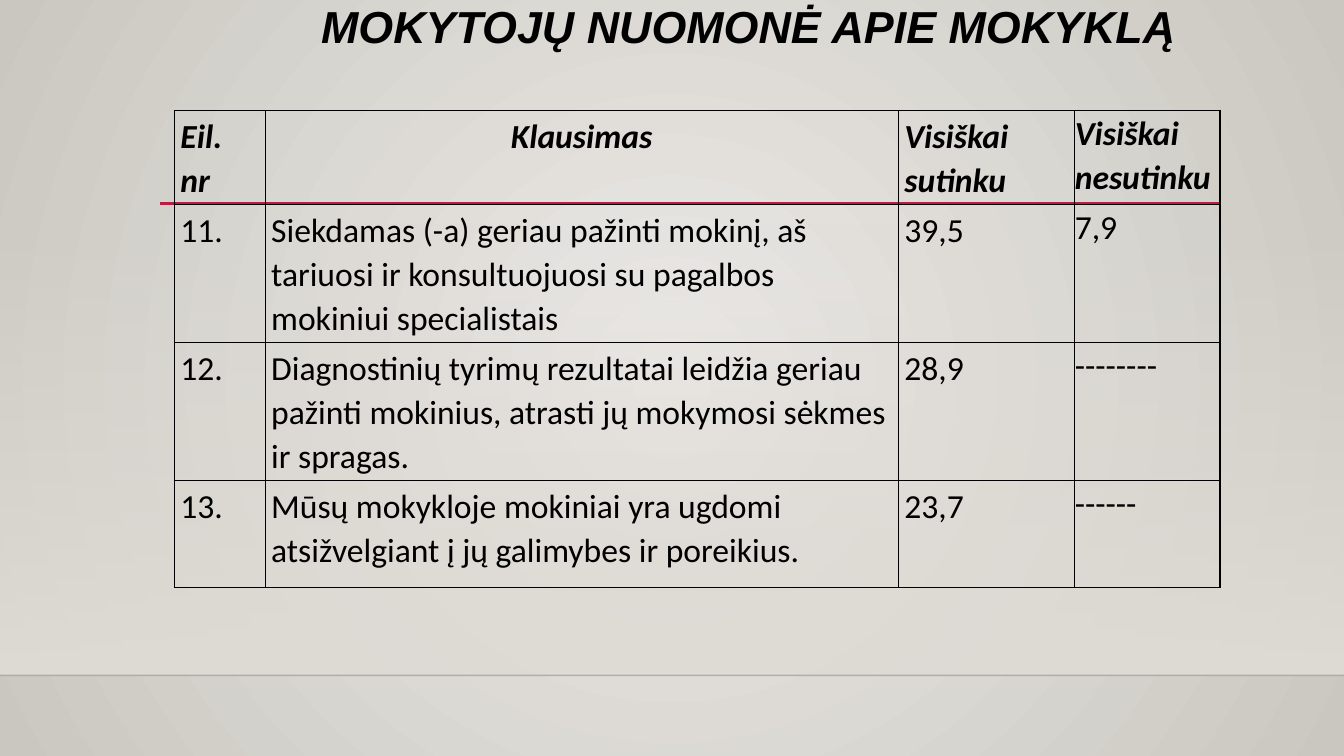
"""Build the slide with the teachers' opinion survey table."""
from lxml import etree
from pptx import Presentation, util as u
from pptx.dml.color import RGBColor
from pptx.enum import shapes, text
from pptx.oxml import parse_xml
from pptx.oxml.ns import nsdecls, qn

WIDTH, HEIGHT = 13.33, 7.5
TITLE = "MOKYTOJŲ NUOMONĖ APIE MOKYKLĄ"
ROWS = [
    ("Eil.\nnr", "Klausimas", "Visiškai sutinku", "Visiškai nesutinku"),
    ("11.", "Siekdamas (-a) geriau pažinti mokinį, aš tariuosi ir konsultuojuosi "
     "su pagalbos mokiniui specialistais", "39,5", "7,9"),
    ("12.", "Diagnostinių tyrimų rezultatai leidžia geriau pažinti mokinius, "
     "atrasti jų mokymosi sėkmes ir spragas.", "28,9", "--------"),
    ("13.", "Mūsų mokykloje mokiniai yra ugdomi atsižvelgiant į jų galimybes "
     "ir poreikius.", "23,7", "------"),
]
COLUMN_WIDTHS = [0.9, 6.28, 1.75, 1.44]
ROW_HEIGHTS = [0.93, 1.37, 1.37, 1.06]
TABLE_LEFT, TABLE_TOP = 1.73, 1.1
FLOOR_TOP, FLOOR_BOTTOM = 2.21, 6.7
RADIAL = ('<a:path path="circle"><a:fillToRect l="50000" t="50000" '
          'r="50000" b="50000"/></a:path>')
DOWNWARD = '<a:lin ang="5400000" scaled="0"/>'


def color(value):
    return RGBColor.from_string(value)


def set_gradient(fill, owner, stops, direction):
    fill.gradient()
    default = next(owner.iter(qn("a:gradFill")))
    stop_list = "".join(
        f'<a:gs pos="{position * 1000}"><a:srgbClr val="{value}">'
        f'<a:alpha val="{opacity * 1000}"/></a:srgbClr></a:gs>'
        for position, value, opacity in stops)
    gradient = parse_xml(f'<a:gradFill {nsdecls("a")} rotWithShape="1">'
                         f'<a:gsLst>{stop_list}</a:gsLst>{direction}</a:gradFill>')
    default.getparent().replace(default, gradient)


def add_rule(slide, left, right, top, value, width):
    rule = slide.shapes.add_connector(
        shapes.MSO_CONNECTOR.STRAIGHT,
        u.Inches(left), u.Inches(top), u.Inches(right), u.Inches(top))
    rule.line.color.rgb = color(value)
    rule.line.width = u.Pt(width)
    etree.SubElement(rule.element.spPr, qn("a:effectLst"))
    return rule


def style_font(paragraph, name, size, emphasis):
    font = paragraph.font
    font.name, font.size = name, u.Pt(size)
    font.bold = font.italic = emphasis
    font.color.rgb = color("000000")


def add_borders(cell):
    properties = cell._tc.get_or_add_tcPr()
    for index, side in enumerate(("lnL", "lnR", "lnT", "lnB")):
        properties.insert(index, parse_xml(
            f'<a:{side} {nsdecls("a")} w="12700"><a:solidFill>'
            f'<a:srgbClr val="000000"/></a:solidFill></a:{side}>'))


def fill_cell(cell, content, row, column):
    cell.text = content
    cell.fill.background()
    last = column == len(COLUMN_WIDTHS) - 1
    cell.margin_left = cell.margin_right = u.Inches(0 if last else 0.06)
    cell.margin_top = cell.margin_bottom = u.Inches(0 if last else 0.03)
    add_borders(cell)
    centered = row == 0 and column == 1
    for paragraph in cell.text_frame.paragraphs:
        paragraph.alignment = text.PP_ALIGN.CENTER if centered else text.PP_ALIGN.LEFT
        paragraph.line_spacing = 1.07
        style_font(paragraph, "Calibri", 24, row == 0)


def add_backdrop(slide):
    set_gradient(slide.background.fill, slide.element,
                 [(0, "ECEAE7", 100), (100, "CAC7C1", 100)], RADIAL)
    wall = slide.shapes.add_shape(
        shapes.MSO_SHAPE.RECTANGLE, 0, u.Inches(FLOOR_TOP),
        u.Inches(WIDTH), u.Inches(FLOOR_BOTTOM - FLOOR_TOP))
    wall.shadow.inherit = False
    wall.line.fill.background()
    set_gradient(wall.fill, wall.element,
                 [(0, "DFDBD5", 0), (100, "DFDBD5", 100)], DOWNWARD)
    floor_edge = add_rule(slide, 0, WIDTH, FLOOR_BOTTOM, "000001", 1)
    edge_color = next(floor_edge.element.iter(qn("a:srgbClr")))
    etree.SubElement(edge_color, qn("a:alpha")).set("val", "20000")
    add_rule(slide, 1.59, 12.1, 2.02, "B71E42", 2.5)


def add_title(slide):
    title = slide.shapes.title
    title.element.getparent().append(title.element)
    title.left, title.top = u.Inches(1.61), 0
    title.width, title.height = u.Inches(11.63), u.Inches(1.44)
    frame = title.text_frame
    frame.text = TITLE
    frame.word_wrap = True
    frame.auto_size = text.MSO_AUTO_SIZE.NONE
    frame.vertical_anchor = text.MSO_ANCHOR.TOP
    paragraph = frame.paragraphs[0]
    paragraph.alignment = text.PP_ALIGN.CENTER
    paragraph.line_spacing = 0.9
    style_font(paragraph, "Arial", 32, True)


def add_survey_table(slide):
    table = slide.shapes.add_table(
        len(ROWS), len(COLUMN_WIDTHS), u.Inches(TABLE_LEFT), u.Inches(TABLE_TOP),
        u.Inches(sum(COLUMN_WIDTHS)), u.Inches(sum(ROW_HEIGHTS))).table
    table.first_row = table.horz_banding = False
    for column, width in zip(table.columns, COLUMN_WIDTHS):
        column.width = u.Inches(width)
    for row, (contents, height) in enumerate(zip(ROWS, ROW_HEIGHTS)):
        table.rows[row].height = u.Inches(height)
        for column, content in enumerate(contents):
            fill_cell(table.cell(row, column), content, row, column)


def main():
    presentation = Presentation()
    presentation.slide_width = u.Inches(WIDTH)
    presentation.slide_height = u.Inches(HEIGHT)
    slide = presentation.slides.add_slide(presentation.slide_layouts[5])
    add_backdrop(slide)
    add_title(slide)
    add_survey_table(slide)
    presentation.save("out.pptx")


if __name__ == "__main__":
    main()
